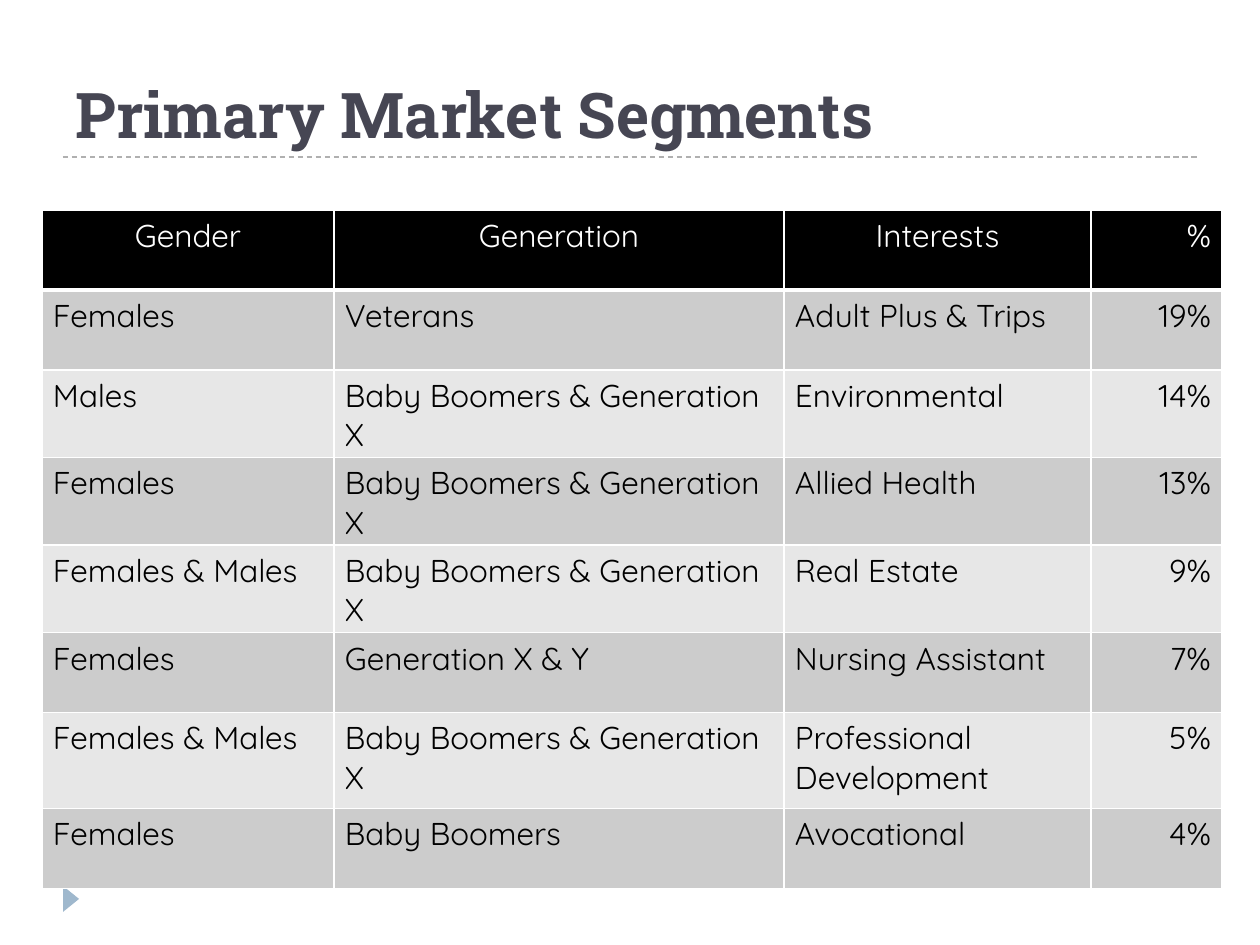
from pptx import Presentation
from pptx.dml.color import RGBColor
from pptx.enum.dml import MSO_LINE
from pptx.enum.shapes import MSO_CONNECTOR, MSO_SHAPE
from pptx.enum.text import MSO_ANCHOR, PP_ALIGN
from pptx.oxml.ns import qn
from pptx.util import Pt
from lxml.etree import SubElement

PX = 914400 // 126  # EMU per px

BLACK = RGBColor(0x00, 0x00, 0x00)
WHITE = RGBColor(0xFF, 0xFF, 0xFF)
SLATE = RGBColor(0x46, 0x46, 0x53)
BLUE = RGBColor(0x9F, 0xB8, 0xCD)
RULE_GREY = RGBColor(0xB0, 0xB0, 0xB0)
BANDS = (RGBColor(0xCC, 0xCC, 0xCC), RGBColor(0xE7, 0xE7, 0xE7))

TITLE_FONT = "Roboto Slab"
BODY_FONT = "Quicksand"

COL_WIDTHS = (292, 450, 307, 131)
ROW_HEIGHTS = (80, 80, 80, 80, 80, 80, 96, 80)
BOOMERS_X = "Baby Boomers & Generation X"
HEADER = ("Gender", "Generation", "Interests", "%")
SEGMENTS = (
    ("Females", "Veterans", "Adult Plus & Trips", "19%"),
    ("Males", BOOMERS_X, "Environmental", "14%"),
    ("Females", BOOMERS_X, "Allied Health", "13%"),
    ("Females & Males", BOOMERS_X, "Real Estate", "9%"),
    ("Females", "Generation X & Y", "Nursing Assistant", "7%"),
    ("Females & Males", BOOMERS_X, "Professional Development", "5%"),
    ("Females", "Baby Boomers", "Avocational", "4%"),
)


def px(*lengths):
    return [n * PX for n in lengths]


def style_text(tf, font, size, color, bold=False, align=PP_ALIGN.LEFT):
    for p in tf.paragraphs:
        p.alignment = align
        for r in p.runs:
            r.font.name = font
            r.font.size = Pt(size)
            r.font.bold = bold
            r.font.color.rgb = color


def add_title(slide, text):
    tf = slide.shapes.add_textbox(*px(63, 21, 1134, 136)).text_frame
    tf.word_wrap = True
    tf.vertical_anchor = MSO_ANCHOR.BOTTOM
    tf.text = text
    style_text(tf, TITLE_FONT, 36, SLATE, bold=True)


def add_dashed_rule(slide, left, right, y):
    line = slide.shapes.add_connector(MSO_CONNECTOR.STRAIGHT,
                                      *px(left, y, right, y))
    line.line.color.rgb = RULE_GREY
    line.line.width = Pt(0.75)
    line.line.dash_style = MSO_LINE.DASH
    SubElement(line._element.spPr, qn("a:effectLst"))


def add_corner_marker(slide):
    sp = slide.shapes.add_shape(MSO_SHAPE.ISOSCELES_TRIANGLE,
                                *px(58, 891, 26, 16))
    sp.rotation = 90
    sp.shadow.inherit = False
    sp.fill.solid()
    sp.fill.fore_color.rgb = BLUE
    sp.line.fill.background()


def set_borders(cell, bottom):
    tc_pr = cell._tc.get_or_add_tcPr()
    for side, width in (("L", 1), ("R", 1), ("T", 1), ("B", bottom)):
        ln = SubElement(tc_pr, qn(f"a:ln{side}"), w=str(Pt(width)))
        fill = SubElement(ln, qn("a:solidFill"))
        SubElement(fill, qn("a:srgbClr"), val=str(WHITE))


def fill_cell(cell, text, fill, color, align, bottom):
    set_borders(cell, bottom)
    cell.fill.solid()
    cell.fill.fore_color.rgb = fill
    cell.margin_left = cell.margin_right = 11 * PX
    cell.margin_top = cell.margin_bottom = 6 * PX
    cell.text_frame.text = text
    style_text(cell.text_frame, BODY_FONT, 18, color, align=align)


def add_segment_table(slide):
    rows = (HEADER,) + SEGMENTS
    table = slide.shapes.add_table(
        len(rows), len(HEADER),
        *px(42, 210, sum(COL_WIDTHS), sum(ROW_HEIGHTS))).table
    for column, width in zip(table.columns, COL_WIDTHS):
        column.width = width * PX
    for row, height in zip(table.rows, ROW_HEIGHTS):
        row.height = height * PX
    for i, values in enumerate(rows):
        is_header = i == 0
        fill = BLACK if is_header else BANDS[(i - 1) % 2]
        color = WHITE if is_header else BLACK
        for j, text in enumerate(values):
            align = PP_ALIGN.CENTER if is_header else PP_ALIGN.LEFT
            if j == len(HEADER) - 1:
                align = PP_ALIGN.RIGHT
            fill_cell(table.cell(i, j), text, fill, color, align,
                      bottom=3 if is_header else 1)


def main():
    prs = Presentation()
    prs.slide_width, prs.slide_height = px(1260, 945)
    slide = prs.slides.add_slide(prs.slide_layouts[6])

    # Frame
    add_dashed_rule(slide, 63, 1197, 157)
    add_corner_marker(slide)

    # Content
    add_title(slide, "Primary Market Segments")
    add_segment_table(slide)

    prs.save("out.pptx")


if __name__ == "__main__":
    main()
